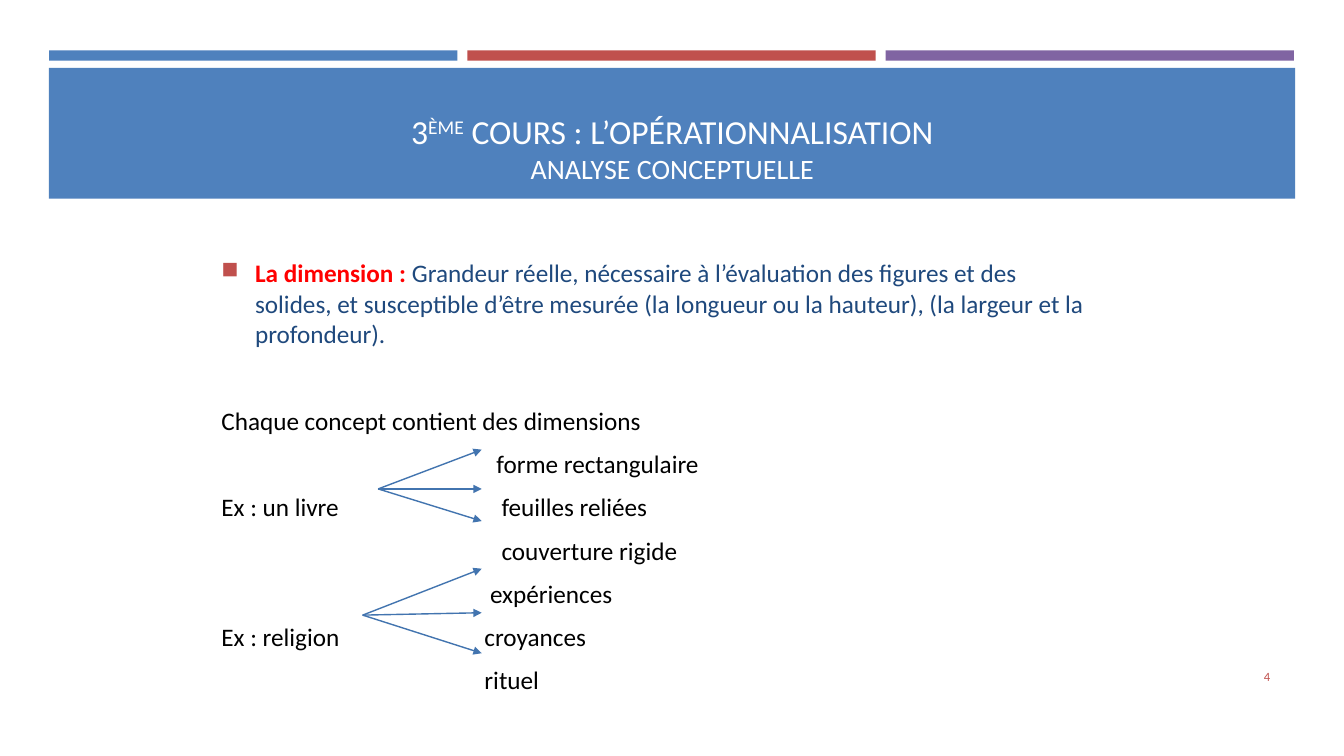
from lxml.etree import SubElement
from pptx import Presentation
from pptx.dml.color import RGBColor
from pptx.enum.shapes import MSO_CONNECTOR, MSO_SHAPE
from pptx.enum.text import MSO_ANCHOR, PP_ALIGN
from pptx.oxml.ns import qn
from pptx.util import Cm, Pt

THEME = {
    "font": "Calibri",
    "blue": "4F81BD", "red": "C0504D", "purple": "8064A2", "arrow": "4274AF",
    "white": "FFFFFF", "term": "FF0000", "navy": "1F497D", "black": "000000",
    "title": 24, "subtitle": 20, "body": 18, "number": 9,
}

TITLE = [
    ("3", {"size": "title"}),
    ("ÈME", {"size": "title", "baseline": 30000}),
    (" COURS : L’OPÉRATIONNALISATION", {"size": "title"}),
    ("\v", {}),
    ("ANALYSE CONCEPTUELLE", {"size": "subtitle"}),
]
DEFINITION = [
    ("La dimension : ", {"color": "term", "bold": True}),
    ("Grandeur réelle, nécessaire à l’évaluation des figures et des solides, "
     "et susceptible d’être mesurée (la longueur ou la hauteur), "
     "(la largeur et la profondeur).", {"color": "navy"}),
]
CONCEPT_INTRO = "Chaque concept contient des dimensions"
CONCEPT_ROWS = [
    ("", "forme rectangulaire", 6.93),
    ("Ex : un livre", "feuilles reliées", 7.06),
    ("", "couverture rigide", 7.06),
    ("", "expériences", 6.77),
    ("Ex : religion", "croyances", 6.63),
    ("", "rituel", 6.63),
]
ARROW_FANS = [
    ((9.53, 12.32), (11.33, 12.32, 13.13)),
    ((9.14, 15.5), (14.33, 15.44, 16.46)),
]
ARROW_END = 12.14
PAGE_NUMBER = "4"
BAR_COLORS = ("blue", "red", "purple")
BAR_LEFT, BAR_TOP, BAR_WIDTH, BAR_HEIGHT, BAR_GAP = 1.24, 1.27, 10.29, 0.26, 0.25


def theme_color(name):
    return RGBColor.from_string(THEME[name])


def add_block(slide, left, top, width, height, color):
    shape = slide.shapes.add_shape(
        MSO_SHAPE.RECTANGLE, Cm(left), Cm(top), Cm(width), Cm(height))
    shape.shadow.inherit = False
    shape.fill.solid()
    shape.fill.fore_color.rgb = theme_color(color)
    shape.line.fill.background()


def add_frame(slide, left, top, width, height, anchor):
    frame = slide.shapes.add_textbox(Cm(left), Cm(top), Cm(width), Cm(height)).text_frame
    frame.word_wrap = True
    frame.vertical_anchor = anchor
    return frame


def add_run(paragraph, text, size="body", color="black", bold=False, baseline=0):
    if text == "\v":
        paragraph.add_line_break()
        return
    run = paragraph.add_run()
    run.text = text
    run.font.name = THEME["font"]
    run.font.size = Pt(THEME[size])
    run.font.color.rgb = theme_color(color)
    run.font.bold = bold
    if baseline:
        run.font._element.set("baseline", str(baseline))


def add_text(frame, runs, align=PP_ALIGN.LEFT, before=0, after=0, bullet=False,
             tab=None, **style):
    paragraph = frame.paragraphs[0]
    if paragraph.runs:
        paragraph = frame.add_paragraph()
    properties = paragraph._p.get_or_add_pPr()
    if bullet:
        properties.set("marL", str(Cm(0.85)))
        properties.set("indent", str(-Cm(0.85)))
        color = SubElement(properties, qn("a:buClr"))
        SubElement(color, qn("a:srgbClr"), val=THEME["red"])
        SubElement(properties, qn("a:buSzPct"), val="92000")
        SubElement(properties, qn("a:buChar"), char="■")
    if tab:
        stops = SubElement(properties, qn("a:tabLst"))
        SubElement(stops, qn("a:tab"), pos=str(Cm(tab)), algn="l")
    paragraph.alignment = align
    paragraph.space_before = Pt(before)
    paragraph.space_after = Pt(after)
    for text, run_style in runs:
        add_run(paragraph, text, **{**style, **run_style})


def add_arrow(slide, start, end):
    arrow = slide.shapes.add_connector(
        MSO_CONNECTOR.STRAIGHT, *(Cm(value) for value in start + end))
    arrow.line.color.rgb = theme_color("arrow")
    arrow.line.width = Pt(1)
    SubElement(arrow.line._get_or_add_ln(), qn("a:tailEnd"), type="triangle")
    SubElement(arrow._element.spPr, qn("a:effectLst"))


def main():
    presentation = Presentation()
    presentation.slide_width, presentation.slide_height = Cm(33.87), Cm(19.05)
    slide = presentation.slides.add_slide(presentation.slide_layouts[6])

    for index, color in enumerate(BAR_COLORS):
        left = BAR_LEFT + index * (BAR_WIDTH + BAR_GAP)
        add_block(slide, left, BAR_TOP, BAR_WIDTH, BAR_HEIGHT, color)
    add_block(slide, 1.23, 1.71, 31.41, 3.3, "blue")

    title = add_frame(slide, 1.63, 1.96, 30.63, 2.82, MSO_ANCHOR.BOTTOM)
    add_text(title, TITLE, align=PP_ALIGN.CENTER, color="white")

    body = add_frame(slide, 5.33, 6.37, 22.43, 11.4, MSO_ANCHOR.TOP)
    add_text(body, DEFINITION, bullet=True, after=6)
    add_text(body, [(CONCEPT_INTRO, {})], before=34.5, after=6)
    for example, dimension, tab in CONCEPT_ROWS:
        add_text(body, [(f"{example}\t{dimension}", {})], before=3.3, after=6, tab=tab)

    number = add_frame(slide, 29.34, 16.54, 2.92, 1.02, MSO_ANCHOR.MIDDLE)
    add_text(number, [(PAGE_NUMBER, {})], align=PP_ALIGN.RIGHT, size="number", color="red")

    for start, heights in ARROW_FANS:
        for height in heights:
            add_arrow(slide, start, (ARROW_END, height))

    presentation.save("out.pptx")


if __name__ == "__main__":
    main()
